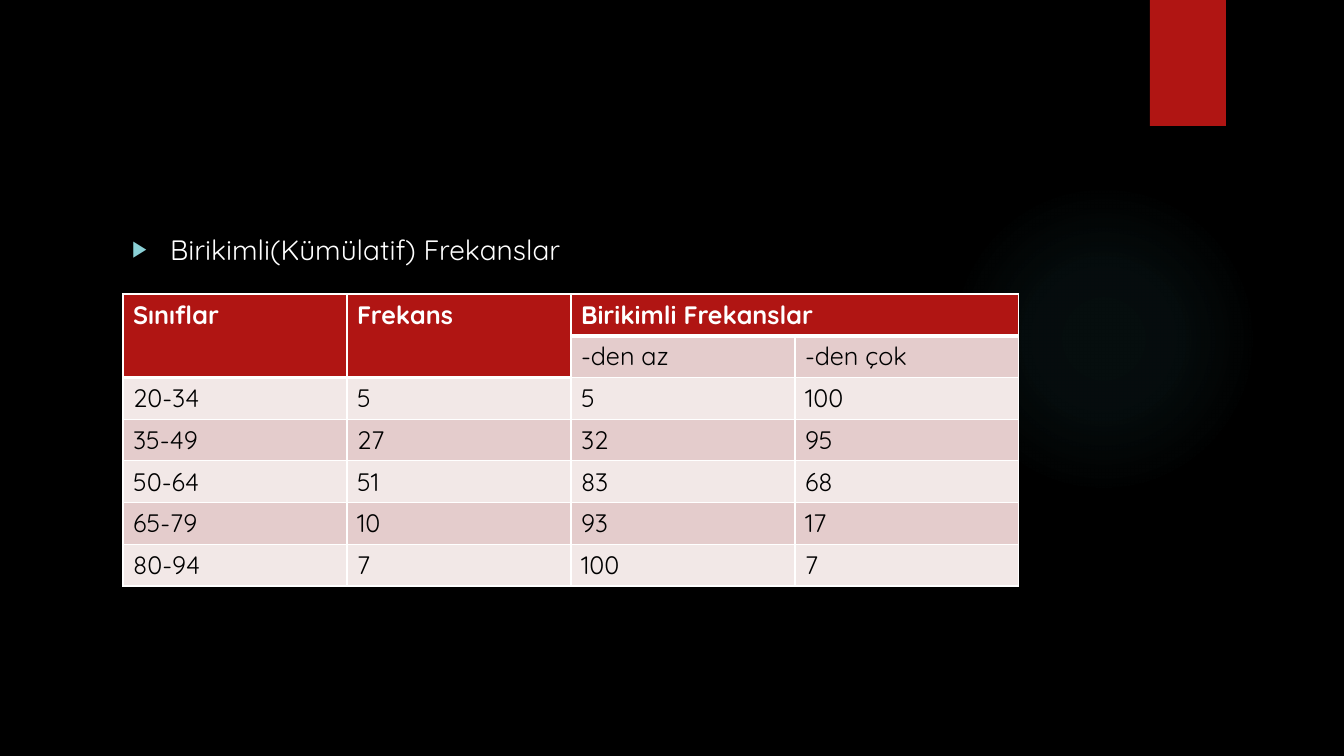
import pptx
import pptx.dml.color
import pptx.enum.shapes
import pptx.enum.text
import pptx.oxml
import pptx.oxml.ns
import pptx.util

HEADING = "Birikimli(Kümülatif) Frekanslar"
ROWS = [
    ("Sınıflar", "Frekans", "Birikimli Frekanslar", ""),
    ("", "", "-den az", "-den çok"),
    ("20-34", "5", "5", "100"),
    ("35-49", "27", "32", "95"),
    ("50-64", "51", "83", "68"),
    ("65-79", "10", "93", "17"),
    ("80-94", "7", "100", "7"),
]
HEADER_DEPTHS = (2, 2, 1, 1)
MERGES = [((0, 0), (1, 0)), ((0, 1), (1, 1)), ((0, 2), (0, 3))]

FONT = "Quicksand"
BLACK, WHITE, RED = "000000", "FFFFFF", "B01513"
GLOW, BULLET = "50B9C1", "8AD0D6"
BANDS = ("F2E8E7", "E4CCCC")
GLOW_STOPS = ((0, 7), (36, 6), (69, 0))

SLIDE_SIZE = (1344, 756)
GLOW_BOX = (949, 184, 310, 310)
RIBBON_BOX = (1150, 0, 76, 126)
BODY_BOX = (122, 227, 986, 463)
TABLE_LEFT, TABLE_TOP, COLUMN_WIDTH, ROW_HEIGHT = 123, 294, 224, 41
BULLET_INDENT = 38
NAMESPACE = pptx.oxml.ns.nsdecls("a")


def px(length):
    return pptx.util.Emu(round(length * 914400 / 100.8))


def color(value):
    return pptx.dml.color.RGBColor.from_string(value)


def fill_solid(fill, value):
    fill.solid()
    fill.fore_color.rgb = color(value)


def write_text(paragraph, text, size=18, value=BLACK, bold=False):
    run = paragraph.add_run()
    run.text = text
    run.font.name = FONT
    run.font.size = pptx.util.Pt(size)
    run.font.bold = bold
    run.font.color.rgb = color(value)


def add_plain_shape(slide, kind, box):
    shape = slide.shapes.add_shape(kind, *map(px, box))
    shape.shadow.inherit = False
    shape.line.fill.background()
    return shape


def add_glow(slide):
    shape = add_plain_shape(slide, pptx.enum.shapes.MSO_SHAPE.OVAL, GLOW_BOX)
    stops = "".join(
        f'<a:gs pos="{position * 1000}"><a:srgbClr val="{GLOW}">'
        f'<a:alpha val="{alpha * 1000}"/></a:srgbClr></a:gs>'
        for position, alpha in GLOW_STOPS
    )
    gradient = pptx.oxml.parse_xml(
        f'<a:gradFill {NAMESPACE}><a:gsLst>{stops}</a:gsLst><a:path path="circle">'
        '<a:fillToRect l="50000" t="50000" r="50000" b="50000"/></a:path></a:gradFill>'
    )
    geometry = shape._element.spPr.find(pptx.oxml.ns.qn("a:prstGeom"))
    geometry.addnext(gradient)


def add_heading(slide):
    body = slide.placeholders[1]
    body.left, body.top, body.width, body.height = map(px, BODY_BOX)
    slide.shapes._spTree.append(body._element)
    body.text_frame.vertical_anchor = pptx.enum.text.MSO_ANCHOR.TOP
    paragraph = body.text_frame.paragraphs[0]
    properties = paragraph._p.get_or_add_pPr()
    properties.set("marL", str(px(BULLET_INDENT)))
    properties.set("indent", str(-px(BULLET_INDENT)))
    for bullet in (
        f'<a:buClr {NAMESPACE}><a:srgbClr val="{BULLET}"/></a:buClr>',
        f'<a:buSzPct {NAMESPACE} val="80000"/>',
        f'<a:buChar {NAMESPACE} char="▶"/>',
    ):
        properties.append(pptx.oxml.parse_xml(bullet))
    paragraph.space_before = pptx.util.Pt(0)
    write_text(paragraph, HEADING, size=20, value=WHITE)


def set_borders(cell, top, bottom):
    properties = cell._tc.get_or_add_tcPr()
    for side, points in (("L", 1), ("R", 1), ("T", top), ("B", bottom)):
        properties.append(pptx.oxml.parse_xml(
            f'<a:ln{side} {NAMESPACE} w="{pptx.util.Pt(points)}"><a:solidFill>'
            f'<a:srgbClr val="{WHITE}"/></a:solidFill></a:ln{side}>'
        ))


def add_frequency_table(slide):
    columns = len(HEADER_DEPTHS)
    table = slide.shapes.add_table(
        len(ROWS), columns, px(TABLE_LEFT), px(TABLE_TOP),
        px(COLUMN_WIDTH * columns), px(ROW_HEIGHT * len(ROWS)),
    ).table
    for row, texts in enumerate(ROWS):
        for column, (text, depth) in enumerate(zip(texts, HEADER_DEPTHS)):
            cell = table.cell(row, column)
            header = row < depth
            set_borders(cell, 3 if row == depth else 1, 3 if header else 1)
            fill_solid(cell.fill, RED if header else BANDS[row % 2])
            if text:
                write_text(cell.text_frame.paragraphs[0], text,
                           value=WHITE if header else BLACK, bold=header)
    for first, last in MERGES:
        table.cell(*first).merge(table.cell(*last))


def main():
    presentation = pptx.Presentation()
    presentation.slide_width, presentation.slide_height = map(px, SLIDE_SIZE)
    slide = presentation.slides.add_slide(presentation.slide_layouts[1])
    fill_solid(slide.background.fill, BLACK)
    title = slide.shapes.title._element
    title.getparent().remove(title)
    add_glow(slide)
    ribbon = add_plain_shape(slide, pptx.enum.shapes.MSO_SHAPE.RECTANGLE, RIBBON_BOX)
    fill_solid(ribbon.fill, RED)
    add_heading(slide)
    add_frequency_table(slide)
    presentation.save("out.pptx")


if __name__ == "__main__":
    main()
